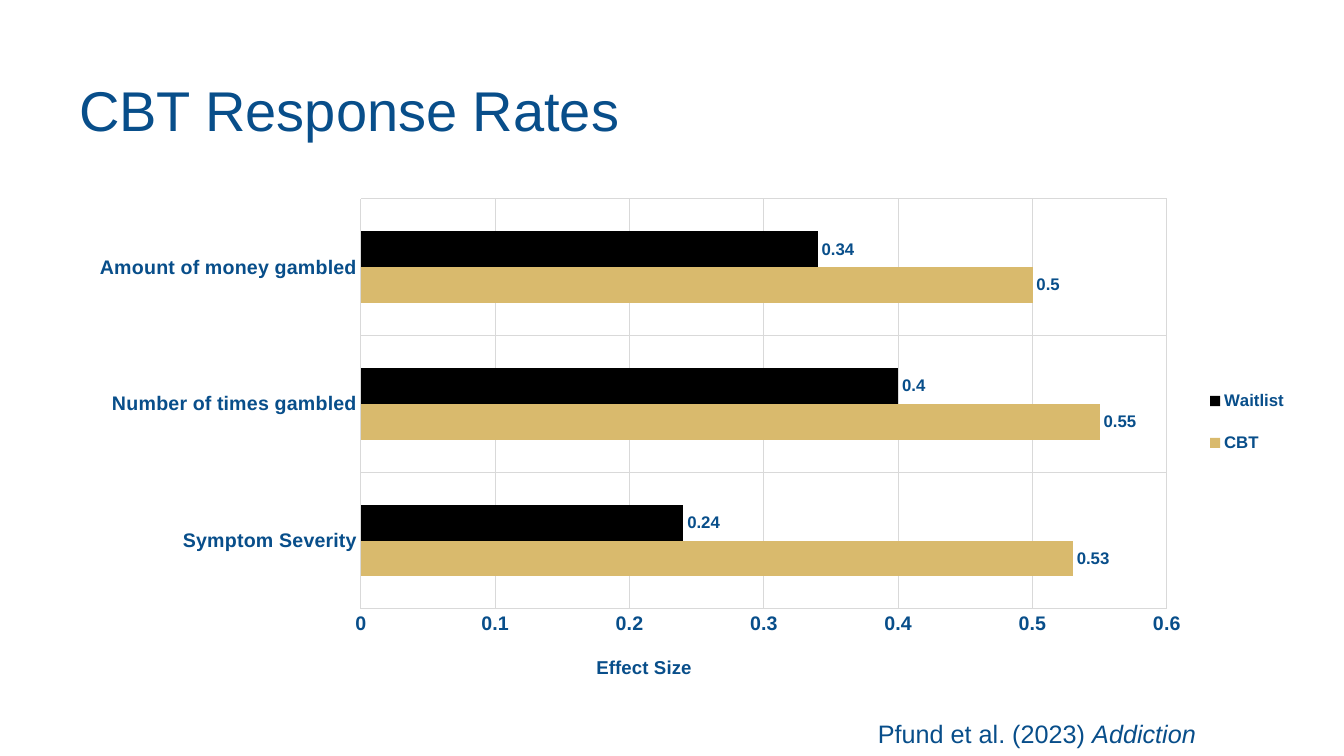
from pptx import Presentation
from pptx.chart.data import CategoryChartData
from pptx.dml.color import RGBColor
from pptx.enum.chart import XL_CHART_TYPE, XL_LABEL_POSITION, XL_LEGEND_POSITION, XL_TICK_MARK
from pptx.enum.text import MSO_ANCHOR, MSO_AUTO_SIZE, PP_ALIGN
from pptx.oxml import parse_xml
from pptx.oxml.ns import nsdecls
from pptx.util import Pt

PX = 914400 / 100.8
THEME = {
    "font": "Arial",
    "blue": RGBColor.from_string("084E8A"),
    "gold": RGBColor.from_string("D9BA6D"),
    "black": RGBColor.from_string("000000"),
    "grid": RGBColor.from_string("D9D9D9"),
    "title": 40, "citation": 18, "axis": 14, "axis_title": 13.3, "label": 12,
}
CHART_BOX = (76, 190, 1224, 505)


def style_font(font, size, bold=False):
    font.name = THEME["font"]
    font.size = Pt(THEME[size])
    font.color.rgb = THEME["blue"]
    font.bold = bold


def place_in_chart(element, index, left, top, width=None, height=None):
    """Position a chart part by slide px, as fractions of the chart box."""
    chart_left, chart_top, chart_width, chart_height = CHART_BOX
    values = {"x": (left - chart_left) / chart_width, "y": (top - chart_top) / chart_height}
    if width:
        values.update(w=width / chart_width, h=height / chart_height)
    target = '<c:layoutTarget val="inner"/>' if element.tag.endswith("plotArea") else ""
    modes = "".join(f'<c:{key}Mode val="edge"/>' for key in "xy")
    sizes = "".join(f'<c:{key} val="{value:.4f}"/>' for key, value in values.items())
    for old in element.xpath("c:layout"):
        element.remove(old)
    element.insert(index, parse_xml(
        f'<c:layout {nsdecls("c")}><c:manualLayout>{target}{modes}{sizes}'
        '</c:manualLayout></c:layout>'))


deck = Presentation()
deck.slide_width, deck.slide_height = round(1344 * PX), round(756 * PX)
page = deck.slides.add_slide(deck.slide_layouts[5])

# Title
title = page.shapes.title
title.left, title.top, title.width, title.height = [round(v * PX) for v in (69, 40, 1139, 146)]
title.text_frame.text = "CBT Response Rates"
title.text_frame.vertical_anchor = MSO_ANCHOR.MIDDLE
para = title.text_frame.paragraphs[0]
para.alignment = PP_ALIGN.LEFT
para.line_spacing = 0.9
style_font(para.runs[0].font, "title")

# Citation
box = page.shapes.add_textbox(*[round(v * PX) for v in (868, 713, 560, 40)])
box.text_frame.word_wrap = True
box.text_frame.auto_size = MSO_AUTO_SIZE.SHAPE_TO_FIT_TEXT
for text, italic in (("Pfund et al. (2023) ", False), ("Addiction", True)):
    span = box.text_frame.paragraphs[0].add_run()
    span.text = text
    style_font(span.font, "citation")
    span.font.italic = italic

# Chart data
data = CategoryChartData()
data.categories = ["Symptom Severity", "Number of times gambled", "Amount of money gambled"]
data.add_series("CBT", (0.53, 0.55, 0.5))
data.add_series("Waitlist", (0.24, 0.4, 0.34))
chart = page.shapes.add_chart(
    XL_CHART_TYPE.BAR_CLUSTERED, *[round(v * PX) for v in CHART_BOX], data).chart
chart.has_title = False
style_font(chart.font, "label")

# Bars and value labels
plot = chart.plots[0]
plot.vary_by_categories = False
plot.gap_width = 182
plot.overlap = 0
for series, color in zip(plot.series, ("gold", "black")):
    series.format.fill.solid()
    series.format.fill.fore_color.rgb = THEME[color]
    labels = series.data_labels
    labels.show_value = True
    labels.position = XL_LABEL_POSITION.OUTSIDE_END
    style_font(labels.font, "label", bold=True)

# Axes
for axis in (chart.category_axis, chart.value_axis):
    axis.major_tick_mark = axis.minor_tick_mark = XL_TICK_MARK.NONE
    style_font(axis.tick_labels.font, "axis", bold=True)
    axis.has_major_gridlines = True
    for line in (axis.major_gridlines.format.line, axis.format.line):
        line.color.rgb = THEME["grid"]
        line.width = Pt(0.75)
effect_axis = chart.value_axis
effect_axis.format.line.fill.background()
effect_axis.minimum_scale, effect_axis.maximum_scale, effect_axis.major_unit = 0, 0.6, 0.1
effect_axis.has_title = True
effect_axis.axis_title.text_frame.text = "Effect Size"
style_font(effect_axis.axis_title.text_frame.paragraphs[0].runs[0].font, "axis_title", bold=True)

# Legend
chart.has_legend = True
chart.legend.position = XL_LEGEND_POSITION.RIGHT
chart.legend.include_in_layout = False
style_font(chart.legend.font, "label", bold=True)

# Placement inside the chart
for part, index, *place in (
    ("c:plotArea", 0, 361, 199, 806, 410),
    ("c:plotArea/c:valAx/c:title", 1, 593, 652),
    ("c:legend", 1, 1198, 368, 98, 108),
):
    place_in_chart(chart.element.xpath(f"c:chart/{part}")[0], index, *place)

deck.save("out.pptx")
